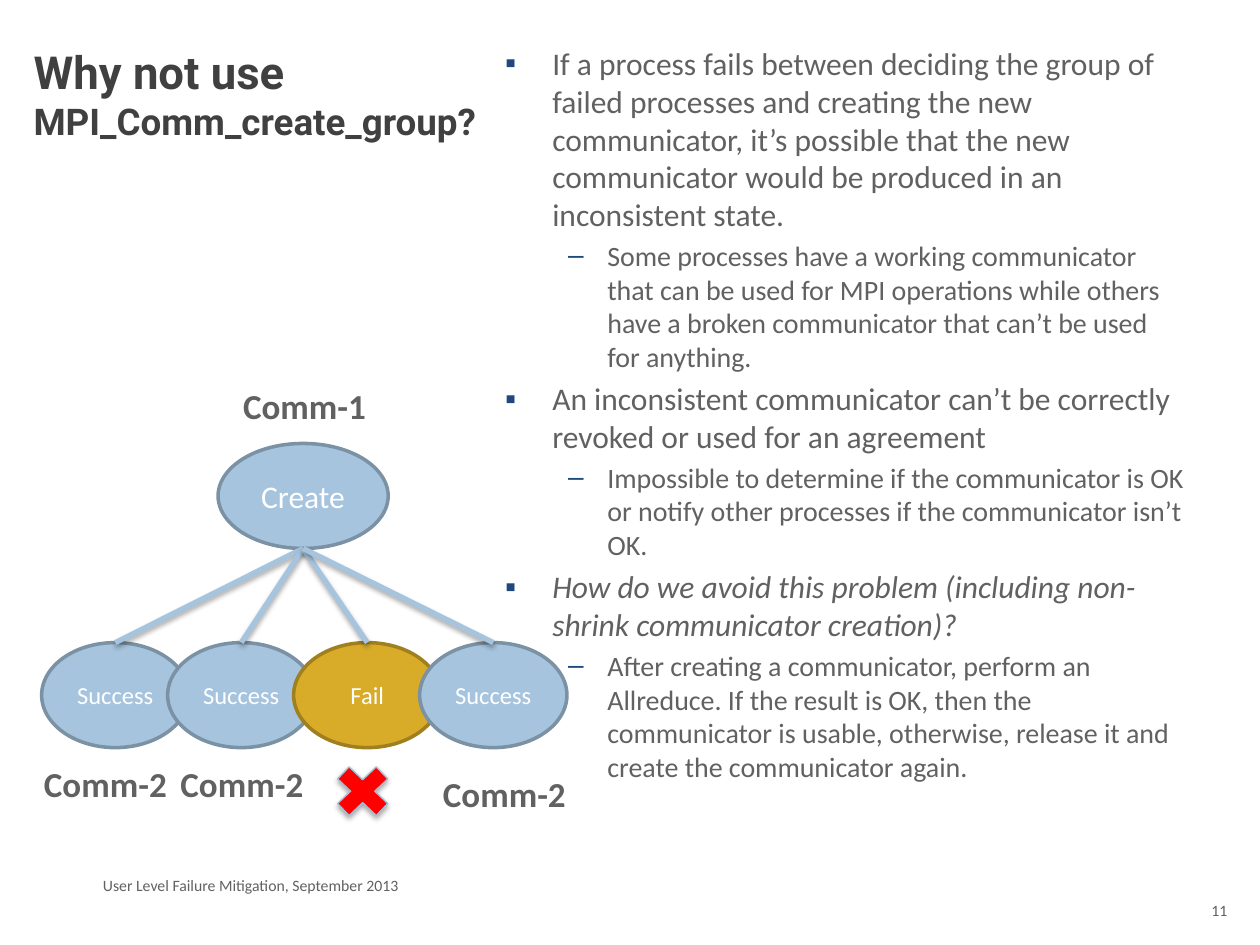
from lxml import etree
from pptx import Presentation
from pptx.dml.color import RGBColor
from pptx.enum.shapes import MSO_CONNECTOR as Connector, MSO_SHAPE as Shape
from pptx.enum.text import MSO_ANCHOR as Anchor, MSO_AUTO_SIZE as AutoSize, PP_ALIGN as Align
from pptx.oxml import parse_xml
from pptx.oxml.ns import nsdecls, qn
from pptx.util import Pt

DARK = RGBColor(0x40, 0x40, 0x40)
GRAY = RGBColor(0x61, 0x61, 0x61)
WHITE = RGBColor(0xFF, 0xFF, 0xFF)
BLUE = RGBColor(0xA6, 0xC4, 0xDE)
BLUE_EDGE = RGBColor(0x7B, 0x91, 0xA4)
GOLD = RGBColor(0xD8, 0xAC, 0x28)
GOLD_EDGE = RGBColor(0xA0, 0x7F, 0x1E)
RED = RGBColor(0xFF, 0x00, 0x00)
RED_EDGE = RGBColor(0xA1, 0xC0, 0xDA)
BULLET = RGBColor(0x1F, 0x49, 0x7D)


def add_text(para, text, size=18, color=GRAY, font="Calibri", bold=False, italic=False, align=Align.LEFT):
    para.alignment = align
    span = para.add_run()
    span.text = text
    span.font.name = font
    span.font.size = Pt(size)
    span.font.bold = bold
    span.font.italic = italic
    span.font.color.rgb = color


def add_shadow(shape):
    shape._element.spPr.append(parse_xml(
        f'<a:effectLst {nsdecls("a")}><a:outerShdw blurRad="{Pt(3.1)}" dist="{Pt(1.8)}" '
        'dir="5400000" rotWithShape="0"><a:srgbClr val="000000"><a:alpha val="35000"/>'
        '</a:srgbClr></a:outerShdw></a:effectLst>'))


deck = Presentation()
deck.slide_width, deck.slide_height = Pt(720), Pt(540)
page = deck.slides.add_slide(deck.slide_layouts[5])

title = page.shapes.title
title.left, title.top, title.width, title.height = Pt(12), Pt(21.6), Pt(276), Pt(116.6)
title.text_frame.auto_size = AutoSize.NONE
title.text_frame.vertical_anchor = Anchor.TOP
heading = title.text_frame.paragraphs[0]
add_text(heading, "Why not use ", size=26, color=DARK, font="Roboto", bold=True)
add_text(heading, "MPI_Comm_create_group?", size=21, color=DARK, font="Roboto", bold=True)

points = [
    (0, "If a process fails between deciding the group of failed processes and creating the new "
        "communicator, it’s possible that the new communicator would be produced in an inconsistent state."),
    (1, "Some processes have a working communicator that can be used for MPI operations while others "
        "have a broken communicator that can’t be used for anything."),
    (0, "An inconsistent communicator can’t be correctly revoked or used for an agreement"),
    (1, "Impossible to determine if the communicator is OK or notify other processes if the "
        "communicator isn’t OK."),
    (0, "How do we avoid this problem (including non-shrink communicator creation)?"),
    (1, "After creating a communicator, perform an Allreduce. If the result is OK, then the "
        "communicator is usable, otherwise, release it and create the communicator again."),
]
levels = [("▪", 18, 27, 27), ("–", 16, 58.5, 22.5)]
body = page.shapes.add_textbox(Pt(281.5), Pt(21.6), Pt(402.5), Pt(460.8)).text_frame
body.word_wrap = True
for number, (level, text) in enumerate(points):
    para = body.add_paragraph() if number else body.paragraphs[0]
    mark, size, margin, hanging = levels[level]
    para.level = level
    para.space_before = Pt(size * 0.2 if number else 0)
    props = para._p.get_or_add_pPr()
    props.set("marL", str(Pt(margin)))
    props.set("indent", str(-Pt(hanging)))
    bullet_color = etree.SubElement(props, qn("a:buClr"))
    etree.SubElement(bullet_color, qn("a:srgbClr"), val=str(BULLET))
    etree.SubElement(props, qn("a:buFont"), typeface="Arial")
    etree.SubElement(props, qn("a:buChar"), char=mark)
    add_text(para, text, size=size, italic=text.startswith("How"))

nodes = [
    ("Create", 18, 124.6, 253.4, 97.2, BLUE, BLUE_EDGE),
    ("Success", 14, 23.8, 367.2, 84.2, BLUE, BLUE_EDGE),
    ("Success", 14, 95.8, 367.2, 84.2, BLUE, BLUE_EDGE),
    ("Fail", 14, 167.8, 367.2, 84.2, GOLD, GOLD_EDGE),
    ("Success", 14, 239.8, 367.2, 84.2, BLUE, BLUE_EDGE),
]
ovals = []
for text, size, left, top, width, fill, edge in nodes:
    oval = page.shapes.add_shape(Shape.OVAL, Pt(left), Pt(top), Pt(width), Pt(60))
    oval.shadow.inherit = False
    oval.fill.solid()
    oval.fill.fore_color.rgb = fill
    oval.line.color.rgb = edge
    oval.line.width = Pt(2)
    oval.text_frame.vertical_anchor = Anchor.MIDDLE
    add_text(oval.text_frame.paragraphs[0], text, size=size, color=WHITE, align=Align.CENTER)
    ovals.append(oval)

root, *leaves = ovals
for leaf in leaves:
    branch = page.shapes.add_connector(
        Connector.STRAIGHT, root.left + root.width // 2, root.top + root.height,
        leaf.left + leaf.width // 2, leaf.top)
    branch.line.color.rgb = BLUE
    branch.line.width = Pt(3)
    add_shadow(branch)

labels = [
    ("Comm-1", 131.8, 216), ("Comm-2", 18, 432),
    ("Comm-2", 96, 432), ("Comm-2", 246, 438),
]
for text, left, top in labels:
    label = page.shapes.add_textbox(Pt(left), Pt(top), Pt(85.7), Pt(31.5)).text_frame
    label.word_wrap = False
    label.auto_size = AutoSize.SHAPE_TO_FIT_TEXT
    add_text(label.paragraphs[0], text, size=20, bold=True)

cross = page.shapes.add_shape(Shape.MATH_MULTIPLY, Pt(186), Pt(432), Pt(42.5), Pt(40.3))
cross.fill.solid()
cross.fill.fore_color.rgb = RED
cross.line.color.rgb = RED_EDGE
cross.line.width = Pt(0.75)
add_shadow(cross)

footers = [
    ("User Level Failure Mitigation, September 2013", 51.8, 496.8, 468, 18, Align.LEFT),
    ("11", 678.2, 511.2, 30.2, 28.8, Align.RIGHT),
]
for text, left, top, width, height, align in footers:
    footer = page.shapes.add_textbox(Pt(left), Pt(top), Pt(width), Pt(height)).text_frame
    footer.word_wrap = True
    add_text(footer.paragraphs[0], text, size=9, align=align)

deck.save("out.pptx")
